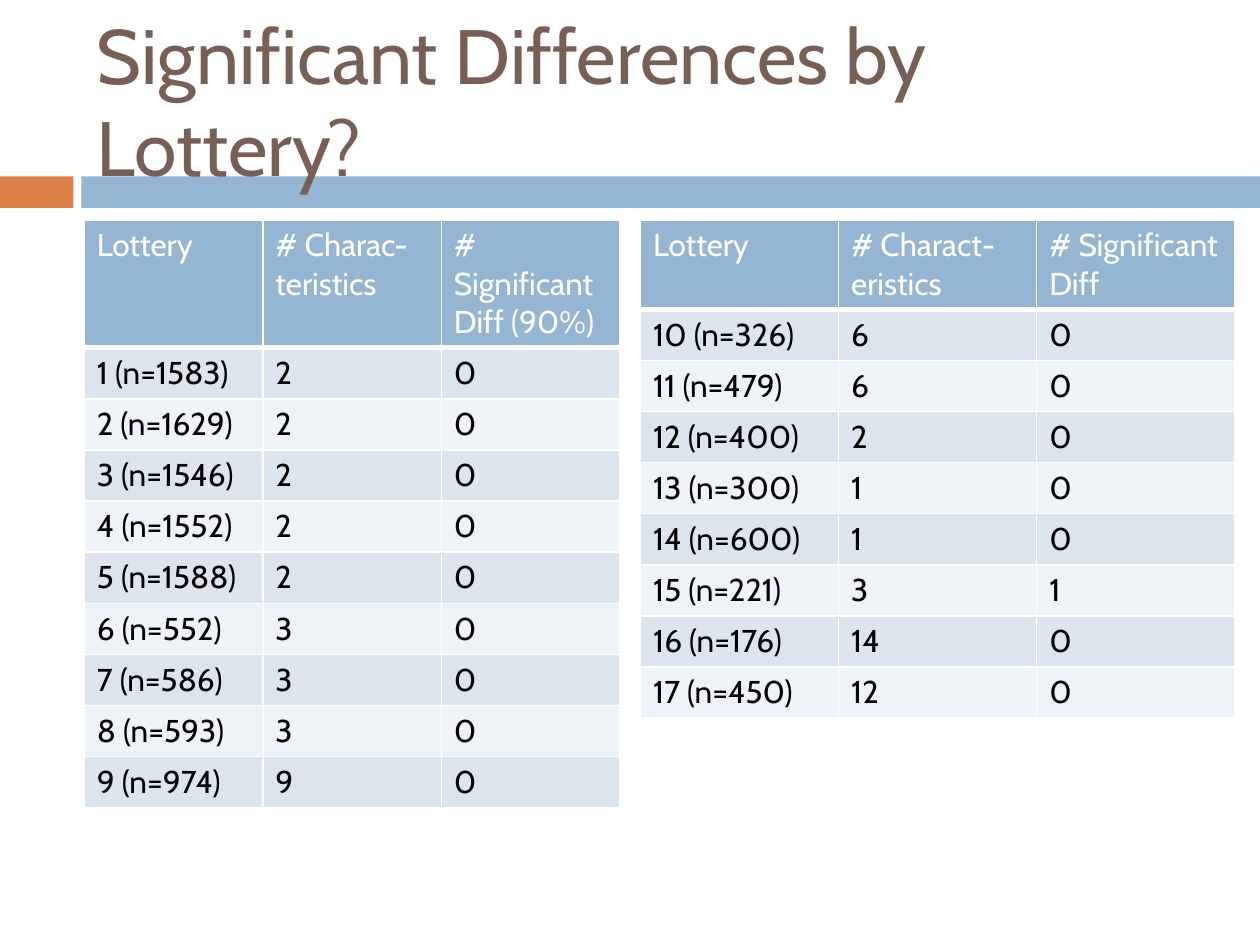
"""Build a slide with two tables of significant differences by lottery."""
import pptx
import pptx.dml.color
import pptx.enum.shapes
import pptx.enum.text
import pptx.oxml
import pptx.oxml.ns
import pptx.util

Pt = pptx.util.Pt
RGBColor = pptx.dml.color.RGBColor

BROWN = RGBColor(0x77, 0x5F, 0x55)
ORANGE = RGBColor(0xDD, 0x80, 0x47)
BLUE = RGBColor(0x94, 0xB6, 0xD2)
DARK_BAND = RGBColor(0xDC, 0xE5, 0xEE)
LIGHT_BAND = RGBColor(0xEE, 0xF3, 0xF7)
WHITE = RGBColor(0xFF, 0xFF, 0xFF)
BLACK = RGBColor(0x00, 0x00, 0x00)

FONT = "Cabin"
TABLE_TOP = 125.6
ROW_HEIGHT = 29.2

EARLY_LOTTERIES = [
    ("Lottery", "# Charac-teristics", "# Significant Diff (90%)"),
    ("1 (n=1583)", "2", "0"),
    ("2 (n=1629)", "2", "0"),
    ("3 (n=1546)", "2", "0"),
    ("4 (n=1552)", "2", "0"),
    ("5 (n=1588)", "2", "0"),
    ("6 (n=552)", "3", "0"),
    ("7 (n=586)", "3", "0"),
    ("8 (n=593)", "3", "0"),
    ("9 (n=974)", "9", "0"),
]
LATE_LOTTERIES = [
    ("Lottery", "# Charact-eristics", "# Significant Diff"),
    ("10 (n=326)", "6", "0"),
    ("11 (n=479)", "6", "0"),
    ("12 (n=400)", "2", "0"),
    ("13 (n=300)", "1", "0"),
    ("14 (n=600)", "1", "0"),
    ("15 (n=221)", "3", "1"),
    ("16 (n=176)", "14", "0"),
    ("17 (n=450)", "12", "0"),
]


def add_text(frame, wording, size, color):
    """Add one formatted run to the first paragraph."""
    run = frame.paragraphs[0].add_run()
    run.text = wording
    run.font.name = FONT
    run.font.size = Pt(size)
    run.font.bold = False
    run.font.color.rgb = color


def add_bar(slide, left, width, color):
    """Add one segment of the bar below the title."""
    bar = slide.shapes.add_shape(
        pptx.enum.shapes.MSO_SHAPE.RECTANGLE, Pt(left), Pt(100.8), Pt(width), Pt(18)
    )
    bar.shadow.inherit = False
    bar.fill.solid()
    bar.fill.fore_color.rgb = color
    bar.line.fill.background()


def format_title(slide, wording):
    """Place the title in front of the bar and fill it in."""
    title = slide.shapes.title
    slide.shapes.element.append(title.element)
    title.left, title.top, title.width, title.height = Pt(48.2), Pt(18), Pt(642), Pt(78)
    frame = title.text_frame
    frame.word_wrap = True
    frame.auto_size = pptx.enum.text.MSO_AUTO_SIZE.NONE
    frame.vertical_anchor = pptx.enum.text.MSO_ANCHOR.MIDDLE
    frame.paragraphs[0].alignment = pptx.enum.text.PP_ALIGN.LEFT
    add_text(frame, wording, 44, BROWN)


def set_borders(cell, bottom):
    """Draw white borders around a cell, with the given bottom width."""
    properties = cell._tc.get_or_add_tcPr()
    for side, width in (("L", 1), ("R", 1), ("T", 1), ("B", bottom)):
        properties.append(pptx.oxml.parse_xml(
            f'<a:ln{side} {pptx.oxml.ns.nsdecls("a")} w="{Pt(width)}">'
            f'<a:solidFill><a:srgbClr val="{WHITE}"/></a:solidFill></a:ln{side}>'
        ))


def add_lottery_table(slide, left, column_width, rows):
    """Add a banded table with a header row and equal columns."""
    column_count = len(rows[0])
    table = slide.shapes.add_table(
        len(rows), column_count, Pt(left), Pt(TABLE_TOP),
        Pt(column_width * column_count), Pt(ROW_HEIGHT * len(rows)),
    ).table
    for column in table.columns:
        column.width = Pt(column_width)
    for row_number, values in enumerate(rows):
        table.rows[row_number].height = Pt(ROW_HEIGHT)
        is_header = row_number == 0
        band = BLUE if is_header else DARK_BAND if row_number % 2 else LIGHT_BAND
        for column_number, wording in enumerate(values):
            cell = table.cell(row_number, column_number)
            set_borders(cell, 3 if is_header else 1)
            cell.fill.solid()
            cell.fill.fore_color.rgb = band
            add_text(cell.text_frame, wording, 18, WHITE if is_header else BLACK)


def main():
    """Build and save the slide."""
    deck = pptx.Presentation()
    deck.slide_width, deck.slide_height = Pt(720), Pt(540)
    slide = deck.slides.add_slide(deck.slide_layouts[5])
    add_bar(slide, 0, 42, ORANGE)
    add_bar(slide, 46.5, 673.5, BLUE)
    format_title(slide, "Significant Differences by Lottery?")
    add_lottery_table(slide, 48.2, 102, EARLY_LOTTERIES)
    add_lottery_table(slide, 366, 113.2, LATE_LOTTERIES)
    deck.save("out.pptx")


if __name__ == "__main__":
    main()
